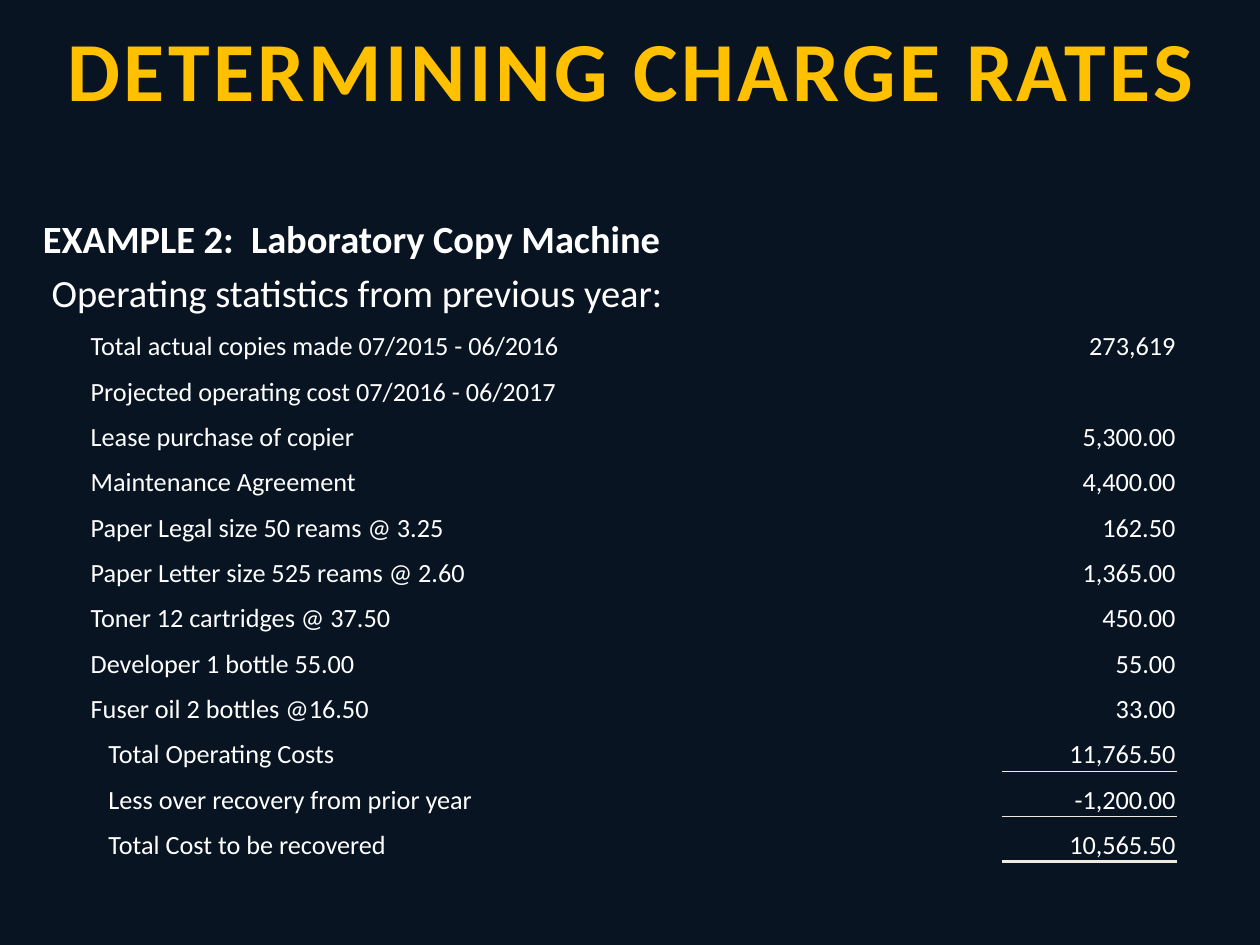
"""Build the slide on charge rates for a copy machine."""
import pptx
import pptx.dml.color
import pptx.enum.text
import pptx.oxml
import pptx.oxml.ns
import pptx.util

Inches = pptx.util.Inches
Pt = pptx.util.Pt
ALIGN = pptx.enum.text.PP_ALIGN
ANCHOR = pptx.enum.text.MSO_ANCHOR
PLAIN = "{2D5ABB26-0587-4C30-8999-92F81FD0307C}"
WHITE = "FFFFFF"
COSTS = [
    ("Total actual copies made 07/2015 - 06/2016", "273,619"),
    ("Projected operating cost 07/2016 - 06/2017", ""),
    ("Lease purchase of copier", "5,300.00"),
    ("Maintenance Agreement", "4,400.00"),
    ("Paper Legal size 50 reams @ 3.25", "162.50"),
    ("Paper Letter size 525 reams @ 2.60", "1,365.00"),
    ("Toner 12 cartridges @ 37.50", "450.00"),
    ("Developer 1 bottle 55.00", "55.00"),
    ("Fuser oil 2 bottles @16.50", "33.00"),
]
TOTALS = [
    ("Total Operating Costs", "11,765.50"),
    ("Less over recovery from prior year", "-1,200.00"),
    ("Total Cost to be recovered", "10,565.50"),
]


def paint(target, color):
    """Give a fill or font one solid colour."""
    if hasattr(target, "solid"):
        target.solid()
        target = target.fore_color
    else:
        target = target.color
    target.rgb = pptx.dml.color.RGBColor.from_string(color)


def style(para, size, color, bold=False):
    """Format every run of a paragraph."""
    for run in para.runs:
        run.font.name = "Calibri"
        run.font.size = Pt(size)
        run.font.bold = bold
        paint(run.font, color)


def place(shape, box, pads):
    """Set the box and the inner margins of a text shape."""
    shape.left, shape.top, shape.width, shape.height = map(Inches, box)
    frame = shape.text_frame
    frame.margin_left, frame.margin_top, frame.margin_right, frame.margin_bottom = map(Inches, pads)
    frame.auto_size = pptx.enum.text.MSO_AUTO_SIZE.NONE
    frame.word_wrap = True
    return frame


def add_title(slide, box):
    """Fill the title placeholder."""
    frame = place(slide.shapes.title, box, (0.3, 0.05, 0.28, 0.05))
    frame.text = "DETERMINING CHARGE RATES"
    frame.vertical_anchor = ANCHOR.MIDDLE
    para = frame.paragraphs[0]
    para.alignment = ALIGN.CENTER
    style(para, 48, "FFC000", True)
    para.runs[0].font._element.set("spc", "200")


def add_body(slide, box):
    """Fill the body placeholder with the two heading lines."""
    frame = place(slide.placeholders[1], box, (0.3, 0.62, 0.3, 0.05))
    frame.vertical_anchor = ANCHOR.TOP
    frame.text = "EXAMPLE 2:  Laboratory Copy Machine\nOperating statistics from previous year:"
    for para, indent, gap, bold in zip(frame.paragraphs, (0.04, 0.11), (0, 4), (True, False)):
        props = para._p.get_or_add_pPr()
        props.set("marL", str(Inches(indent)))
        props.set("indent", "0")
        props.append(pptx.oxml.parse_xml(f"<a:buNone {pptx.oxml.ns.nsdecls('a')}/>"))
        para.space_before = Pt(gap)
        para.space_after = Pt(0)
        style(para, 22, WHITE, bold)


def rule(cell, side, width):
    """Draw a line on the top (T) or base (B) of a cell."""
    props = cell._tc.get_or_add_tcPr()
    line = pptx.oxml.parse_xml(
        f"<a:ln{side} {pptx.oxml.ns.nsdecls('a')} w='{Pt(width)}'>"
        f"<a:solidFill><a:srgbClr val='EEECE1'/></a:solidFill></a:ln{side}>")
    props.insert(0, line)


def fill_cell(cell, text, align, indent=0):
    """Write and format one table cell."""
    cell.fill.background()
    cell.vertical_anchor = ANCHOR.BOTTOM
    cell.margin_left = Inches(0.01 + indent)
    cell.margin_right = cell.margin_top = Inches(0.01)
    cell.margin_bottom = 0
    para = cell.text_frame.paragraphs[0]
    para.text = text
    para.alignment = align
    style(para, 15, WHITE)


def add_costs(slide, box):
    """Add the cost table with ruled totals."""
    rows = COSTS + TOTALS
    frame = slide.shapes.add_table(len(rows), 3, *map(Inches, box))
    table = frame.table
    table.first_row = table.horz_banding = False
    table._tbl.tblPr.find(pptx.oxml.ns.qn("a:tableStyleId")).text = PLAIN
    for col, width in zip(table.columns, (5.68, 1.56, 1.39)):
        col.width = Inches(width)
    for num, (label, value) in enumerate(rows):
        table.rows[num].height = Inches(box[3] / len(rows))
        first, mid, last = table.rows[num].cells
        indent = 0.14 if num >= len(COSTS) else 0
        fill_cell(first, label, ALIGN.LEFT, indent)
        fill_cell(mid, "", ALIGN.LEFT)
        fill_cell(last, value, ALIGN.RIGHT)
        if num >= len(COSTS):
            rule(last, "B", 2 if num == len(rows) - 1 else 0.5)
        if num > len(COSTS):
            rule(last, "T", 0.5)


def main():
    """Build and save the slide."""
    deck = pptx.Presentation()
    deck.slide_width, deck.slide_height = Inches(10), Inches(7.5)
    slide = deck.slides.add_slide(deck.slide_layouts[1])
    paint(slide.background.fill, "081422")
    add_title(slide, (0, 0, 10, 1.08))
    add_body(slide, (0, 1.09, 10, 5.65))
    add_costs(slide, (0.71, 2.52, 8.63, 4.32))
    deck.save("out.pptx")


if __name__ == "__main__":
    main()
